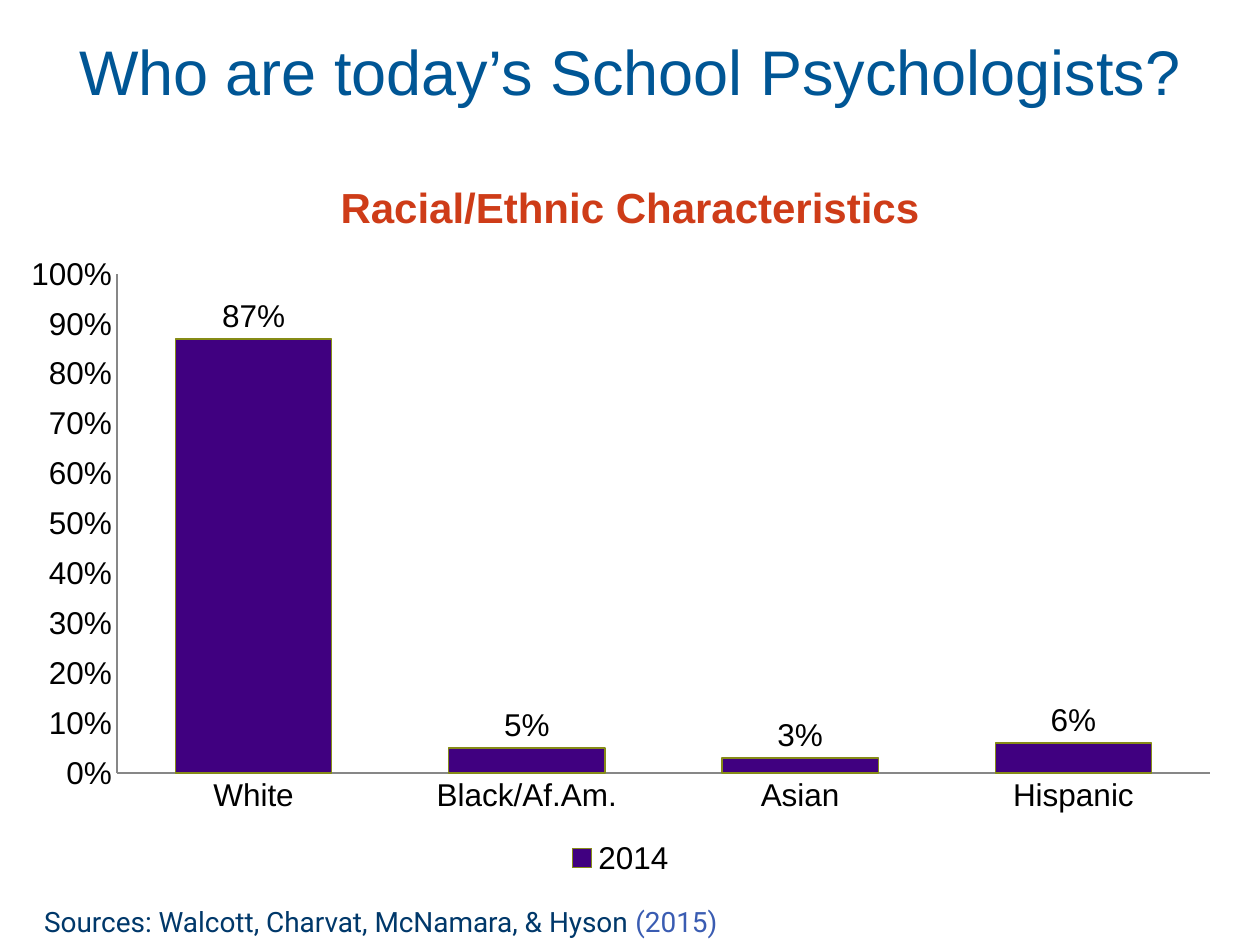
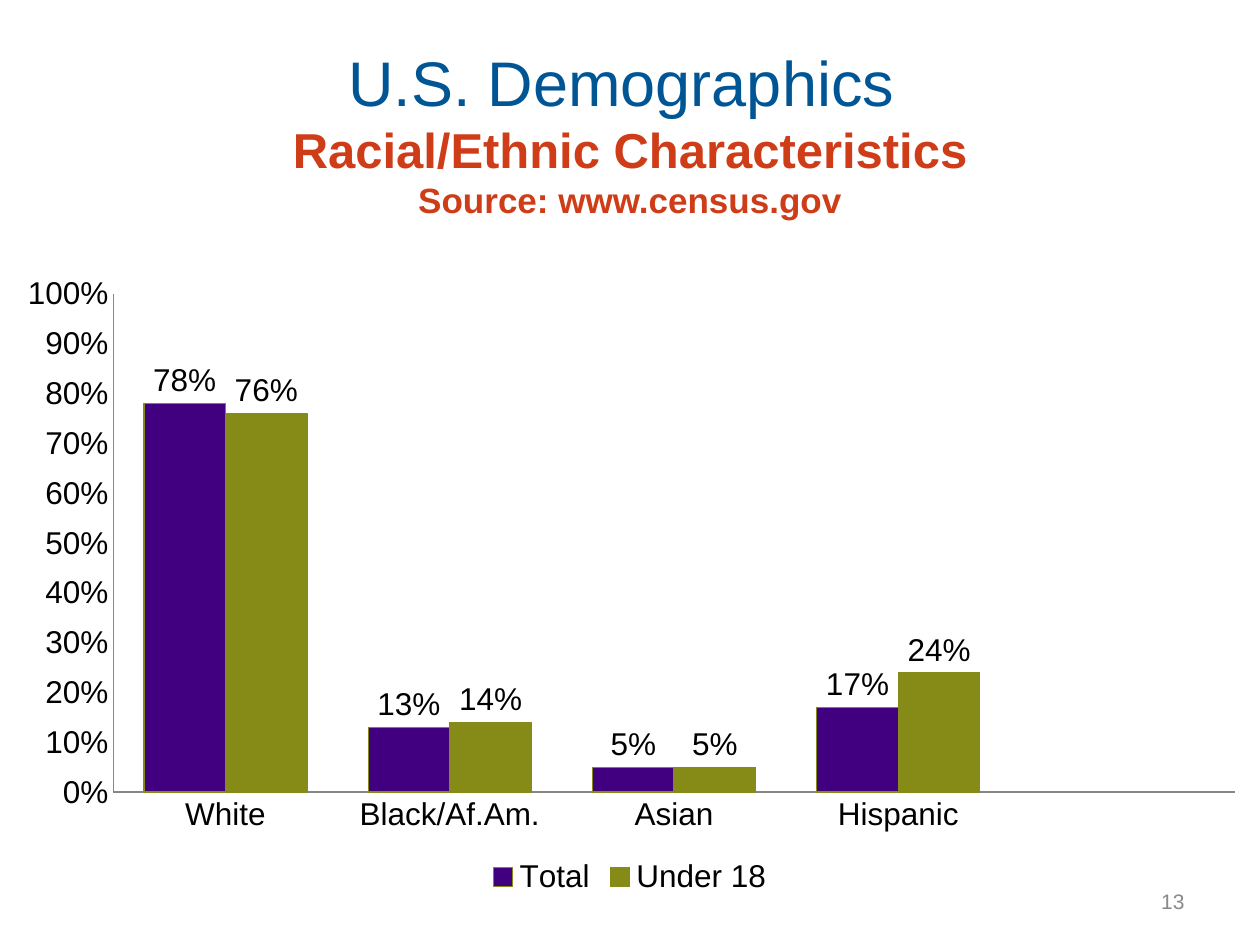
from lxml import etree
from pptx import Presentation
from pptx.chart.data import CategoryChartData
from pptx.dml.color import RGBColor
from pptx.enum.chart import XL_CHART_TYPE, XL_LABEL_POSITION, XL_LEGEND_POSITION, XL_TICK_MARK
from pptx.enum.text import MSO_ANCHOR, MSO_AUTO_SIZE, PP_ALIGN
from pptx.oxml.ns import qn
from pptx.util import Cm, Pt

COLUMNS = XL_CHART_TYPE.COLUMN_CLUSTERED
OUTSIDE_END = XL_LABEL_POSITION.OUTSIDE_END
LEGEND_BOTTOM = XL_LEGEND_POSITION.BOTTOM
NO_TICK = XL_TICK_MARK.NONE
CENTER, LEFT, RIGHT = PP_ALIGN.CENTER, PP_ALIGN.LEFT, PP_ALIGN.RIGHT
MIDDLE, TOP = MSO_ANCHOR.MIDDLE, MSO_ANCHOR.TOP

COLORS = {
    "title": "005695", "accent": "CE3C18", "text": "000000", "source": "00386A",
    "year": "3A5CB2", "number": "898989", "axis": "878787",
    "purple": "400080", "olive": "868B17",
}
GROUPS = ["White", "Black/Af.Am.", "Asian", "Hispanic"]


def color(name):
    return RGBColor.from_string(COLORS[name])


class DeckBuilder:
    """Holds the deck's style and the slide being built."""

    def __init__(self):
        self.deck = Presentation()
        self.deck.slide_width, self.deck.slide_height = Cm(25.4), Cm(19.05)
        self.page = None

    def add_page(self):
        self.page = self.deck.slides.add_slide(self.deck.slide_layouts[5])

    def style(self, font, size, color_name, name="Arial", bold=False):
        font.name, font.size, font.bold = name, Pt(size), bold
        font.color.rgb = color(color_name)

    def title(self, heading, subtitles, gap=0):
        """Puts a heading and (text, size) subtitles in the title; gap is in points."""
        box = self.page.shapes.title
        box.left, box.top, box.width, box.height = Cm(1.27), Cm(1.07), Cm(22.86), Cm(3.18)
        frame = box.text_frame
        frame.vertical_anchor, frame.auto_size = MIDDLE, MSO_AUTO_SIZE.NONE
        para = frame.paragraphs[0]
        para.text, para.alignment = heading, CENTER
        self.style(para.font, 36, "title")
        for index, (text, size) in enumerate(subtitles):
            para = frame.add_paragraph()
            para.text, para.alignment = text, CENTER
            para.space_before = Pt(0 if index else gap)
            self.style(para.font, size, "accent", bold=True)

    def text(self, place, spans, size, font="Arial", align=LEFT, anchor=TOP):
        """Adds one line made of (text, color name) spans."""
        box = self.page.shapes.add_textbox(*map(Cm, place))
        frame = box.text_frame
        frame.word_wrap, frame.vertical_anchor = True, anchor
        para = frame.paragraphs[0]
        para.alignment = align
        para.font.name, para.font.size = font, Pt(size)
        for text, color_name in spans:
            span = para.add_run()
            span.text = text
            span.font.color.rgb = color(color_name)

    def column_chart(self, place, groups, series, plot_area):
        """Adds percentage columns from (name, values, color name) series."""
        data = CategoryChartData(number_format="0%")
        data.categories = groups
        for name, values, _ in series:
            data.add_series(name, values)
        chart = self.page.shapes.add_chart(COLUMNS, *map(Cm, place), data).chart
        self.style(chart.font, 18, "text")
        chart.has_title = False
        chart.has_legend = True
        chart.legend.position = LEGEND_BOTTOM
        chart.legend.include_in_layout = False
        for axis in (chart.category_axis, chart.value_axis):
            axis.has_major_gridlines = False
            axis.major_tick_mark = axis.minor_tick_mark = NO_TICK
            axis.format.line.color.rgb = color("axis")
        scale = chart.value_axis
        scale.minimum_scale, scale.maximum_scale, scale.major_unit = 0, 1, 0.1
        scale.tick_labels.number_format = "0%"
        scale.tick_labels.number_format_is_linked = False
        plot = chart.plots[0]
        plot.gap_width, plot.overlap, plot.vary_by_categories = 75, 0, False
        for columns, (_, _, fill) in zip(plot.series, series):
            columns.format.fill.solid()
            columns.format.fill.fore_color.rgb = color(fill)
            columns.format.line.color.rgb = color("olive")
            columns.format.line.width = Pt(0.75)
            labels = columns.data_labels
            labels.show_value, labels.position = True, OUTSIDE_END
            labels.number_format, labels.number_format_is_linked = "0%", False
            self.style(labels.font, 18, "text")
        self.fix_plot_area(chart, plot_area)

    def fix_plot_area(self, chart, fractions):
        """Sets the inner plot area as x, y, w, h fractions of the chart."""
        area = chart.element.find(".//" + qn("c:plotArea"))
        for old in area.findall(qn("c:layout")):
            area.remove(old)
        layout = etree.Element(qn("c:layout"))
        area.insert(0, layout)
        manual = etree.SubElement(layout, qn("c:manualLayout"))
        settings = [("layoutTarget", "inner"), ("xMode", "edge"), ("yMode", "edge")]
        settings += zip("xywh", map(str, fractions))
        for tag, value in settings:
            etree.SubElement(manual, qn("c:" + tag)).set("val", value)


def main():
    builder = DeckBuilder()

    builder.add_page()
    builder.title("Who are today’s School Psychologists?",
                  [("Racial/Ethnic Characteristics", 24)], gap=42)
    builder.column_chart((0.13, 4.88, 24.76, 12.9), GROUPS,
                         [("2014", (0.87, 0.05, 0.03, 0.06), "purple")],
                         (0.09, 0.05, 0.89, 0.78))
    builder.text((0.64, 18.1, 17.98, 0.95),
                 [("Sources: Walcott, Charvat, McNamara, & Hyson", "source"),
                  (" (2015)", "year")], 16, font="Roboto")

    builder.add_page()
    builder.title("U.S. Demographics ", [("Racial/Ethnic Characteristics", 28),
                                         ("Source: www.census.gov", 20)])
    builder.column_chart((0, 5.28, 25.4, 12.88), GROUPS + [""],
                         [("Total", (0.78, 0.13, 0.05, 0.17, None), "purple"),
                          ("Under 18", (0.76, 0.14, 0.05, 0.24, None), "olive")],
                         (0.09, 0.05, 0.89, 0.78))
    builder.text((18.21, 17.65, 5.92, 1.02), [("13", "number")], 12,
                 align=RIGHT, anchor=MIDDLE)

    builder.deck.save("out.pptx")


if __name__ == "__main__":
    main()
